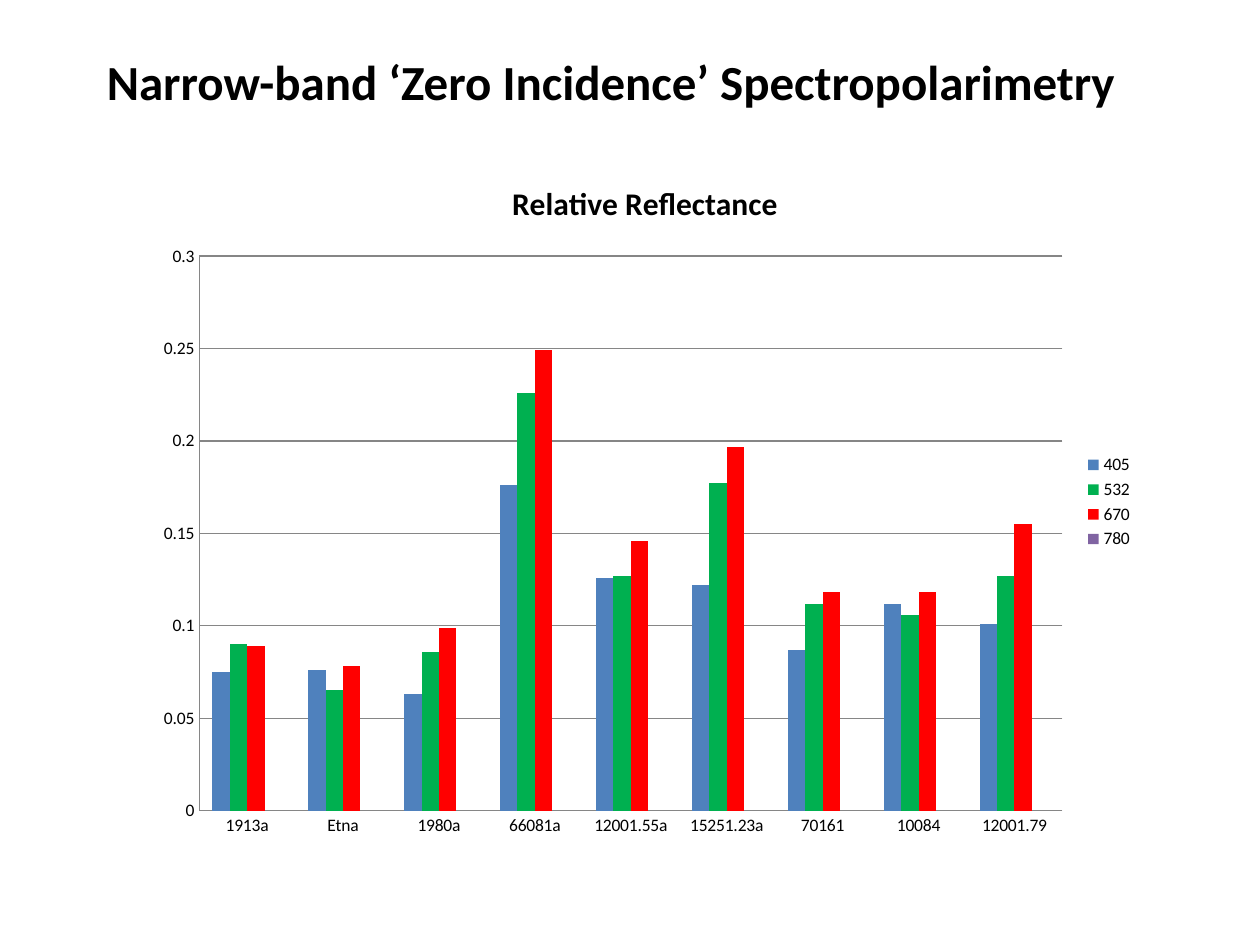
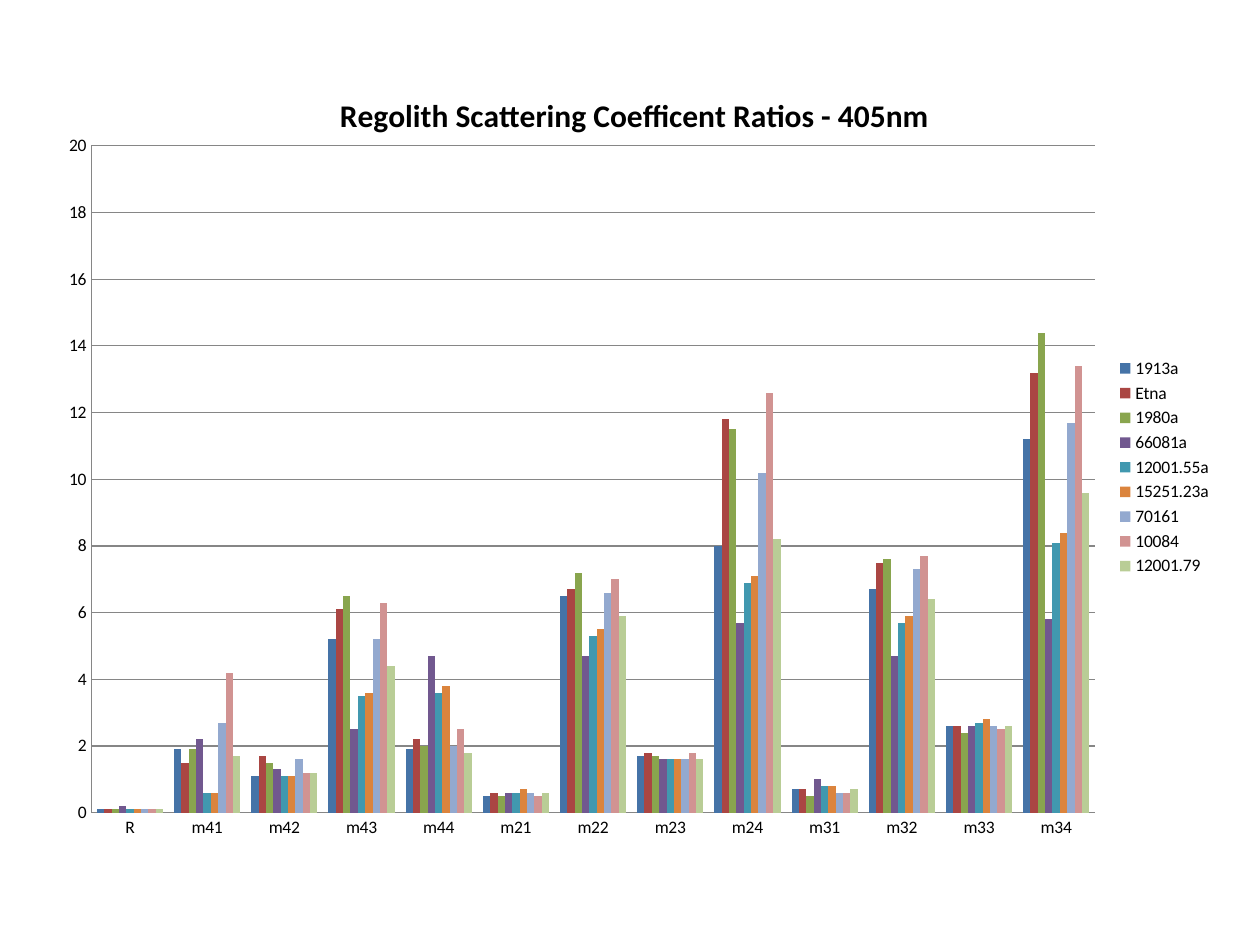
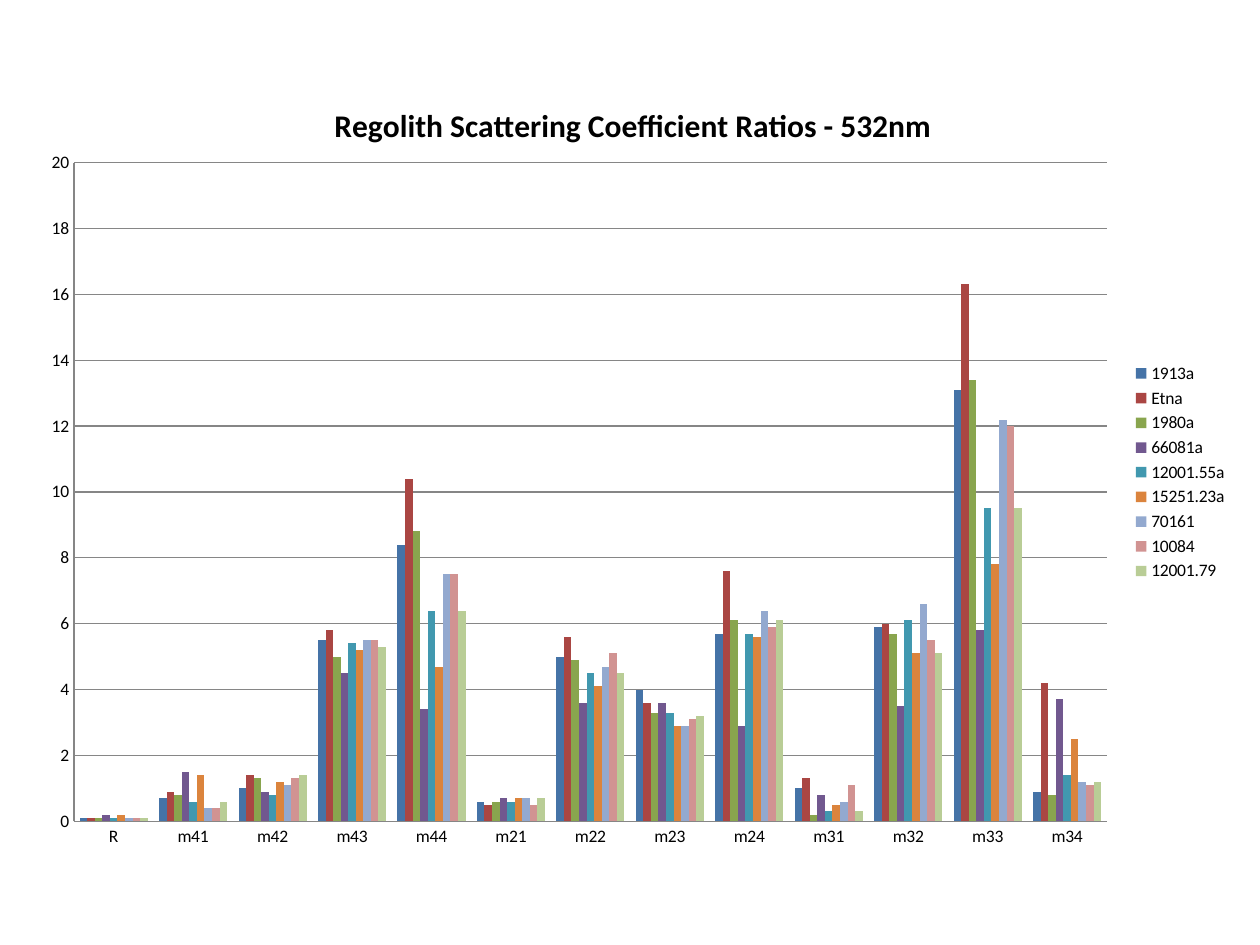
from lxml import etree
from pptx import Presentation
from pptx.chart.data import CategoryChartData
from pptx.dml.color import RGBColor
from pptx.enum.chart import XL_CHART_TYPE, XL_LEGEND_POSITION, XL_TICK_MARK
from pptx.enum.text import MSO_ANCHOR, MSO_AUTO_SIZE, PP_ALIGN
from pptx.oxml.ns import qn
from pptx.util import Cm, Pt

CLUSTERED = XL_CHART_TYPE.COLUMN_CLUSTERED
LEGEND_RIGHT = XL_LEGEND_POSITION.RIGHT
NO_TICKS = XL_TICK_MARK.NONE
LEFT, TOP, FIT_SHAPE = PP_ALIGN.LEFT, MSO_ANCHOR.TOP, MSO_AUTO_SIZE.SHAPE_TO_FIT_TEXT
TITLE_ONLY, BLANK = 5, 6

COLORS = {
    "text": "000000", "grid": "868686", "background": "FFFFFF",
    "405": "4F81BD", "532": "00B050", "670": "FF0000", "780": "8064A2",
    "1913a": "4573A7", "Etna": "AA4643", "1980a": "89A54E",
    "66081a": "71588F", "12001.55a": "4198AF", "15251.23a": "DB843D",
    "70161": "93A9CF", "10084": "D19392", "12001.79": "B9CD96",
}
SAMPLES = ["1913a", "Etna", "1980a", "66081a", "12001.55a", "15251.23a",
           "70161", "10084", "12001.79"]
COEFFICIENTS = ["R"] + [f"m{row}{column}" for row in (4, 2, 3) for column in (1, 2, 3, 4)]

# Reflectance by wavelength, one value per sample
REFLECTANCE = {
    "405": [0.075, 0.076, 0.063, 0.176, 0.126, 0.122, 0.087, 0.112, 0.101],
    "532": [0.09, 0.065, 0.086, 0.226, 0.127, 0.177, 0.112, 0.106, 0.127],
    "670": [0.089, 0.078, 0.099, 0.249, 0.146, 0.197, 0.118, 0.118, 0.155],
    "780": [None] * len(SAMPLES),
}
# Scattering ratios, one row per sample and one value per coefficient
RATIOS_405 = [
    [0.1, 1.9, 1.1, 5.2, 1.9, 0.5, 6.5, 1.7, 8, 0.7, 6.7, 2.6, 11.2],
    [0.1, 1.5, 1.7, 6.1, 2.2, 0.6, 6.7, 1.8, 11.8, 0.7, 7.5, 2.6, 13.2],
    [0.1, 1.9, 1.5, 6.5, 2, 0.5, 7.2, 1.7, 11.5, 0.5, 7.6, 2.4, 14.4],
    [0.2, 2.2, 1.3, 2.5, 4.7, 0.6, 4.7, 1.6, 5.7, 1, 4.7, 2.6, 5.8],
    [0.1, 0.6, 1.1, 3.5, 3.6, 0.6, 5.3, 1.6, 6.9, 0.8, 5.7, 2.7, 8.1],
    [0.1, 0.6, 1.1, 3.6, 3.8, 0.7, 5.5, 1.6, 7.1, 0.8, 5.9, 2.8, 8.4],
    [0.1, 2.7, 1.6, 5.2, 2, 0.6, 6.6, 1.6, 10.2, 0.6, 7.3, 2.6, 11.7],
    [0.1, 4.2, 1.2, 6.3, 2.5, 0.5, 7, 1.8, 12.6, 0.6, 7.7, 2.5, 13.4],
    [0.1, 1.7, 1.2, 4.4, 1.8, 0.6, 5.9, 1.6, 8.2, 0.7, 6.4, 2.6, 9.6],
]
RATIOS_532 = [
    [0.1, 0.7, 1, 5.5, 8.4, 0.6, 5, 4, 5.7, 1, 5.9, 13.1, 0.9],
    [0.1, 0.9, 1.4, 5.8, 10.4, 0.5, 5.6, 3.6, 7.6, 1.3, 6, 16.3, 4.2],
    [0.1, 0.8, 1.3, 5, 8.8, 0.6, 4.9, 3.3, 6.1, 0.2, 5.7, 13.4, 0.8],
    [0.2, 1.5, 0.9, 4.5, 3.4, 0.7, 3.6, 3.6, 2.9, 0.8, 3.5, 5.8, 3.7],
    [0.1, 0.6, 0.8, 5.4, 6.4, 0.6, 4.5, 3.3, 5.7, 0.3, 6.1, 9.5, 1.4],
    [0.2, 1.4, 1.2, 5.2, 4.7, 0.7, 4.1, 2.9, 5.6, 0.5, 5.1, 7.8, 2.5],
    [0.1, 0.4, 1.1, 5.5, 7.5, 0.7, 4.7, 2.9, 6.4, 0.6, 6.6, 12.2, 1.2],
    [0.1, 0.4, 1.3, 5.5, 7.5, 0.5, 5.1, 3.1, 5.9, 1.1, 5.5, 12, 1.1],
    [0.1, 0.6, 1.4, 5.3, 6.4, 0.7, 4.5, 3.2, 6.1, 0.3, 5.1, 9.5, 1.2],
]


def color(name):
    return RGBColor.from_string(COLORS[name])


class DeckBuilder:
    """Holds the deck, its style and the current page."""

    def __init__(self):
        self.deck = Presentation()
        self.deck.slide_width, self.deck.slide_height = Cm(25.4), Cm(19.05)
        self.page = None

    def add_page(self, layout):
        self.page = self.deck.slides.add_slide(self.deck.slide_layouts[layout])
        fill = self.page.background.fill
        fill.solid()
        fill.fore_color.rgb = color("background")

    def set_font(self, font, size, bold=False):
        font.name, font.size, font.bold = "Calibri", Pt(size), bold
        font.color.rgb = color("text")

    def add_title(self, text, left, top, width, height):
        box = self.page.shapes.title
        box.left, box.top, box.width, box.height = map(Cm, (left, top, width, height))
        frame = box.text_frame
        frame.text = text
        frame.word_wrap, frame.auto_size = False, FIT_SHAPE
        frame.vertical_anchor = TOP
        paragraph = frame.paragraphs[0]
        paragraph.alignment = LEFT
        self.set_font(paragraph.font, 28, bold=True)

    def add_column_chart(self, title, categories, series, area, top_value, step, plot_area=None):
        data = CategoryChartData()
        data.categories = categories
        for name, values in series.items():
            data.add_series(name, values)
        chart = self.page.shapes.add_chart(CLUSTERED, *map(Cm, area), data).chart
        self.set_font(chart.font, 10)

        # Title and legend
        chart.has_title = True
        chart.chart_title.text_frame.text = title
        self.set_font(chart.chart_title.text_frame.paragraphs[0].font, 18, bold=True)
        chart.has_legend = True
        chart.legend.position = LEGEND_RIGHT
        chart.legend.include_in_layout = False

        # Columns
        plot = chart.plots[0]
        plot.gap_width, plot.vary_by_categories = 150, False
        for column in plot.series:
            column.format.fill.solid()
            column.format.fill.fore_color.rgb = color(column.name)

        # Axes
        values = chart.value_axis
        values.minimum_scale, values.maximum_scale, values.major_unit = 0, top_value, step
        values.has_major_gridlines = True
        for axis in (chart.category_axis, values):
            axis.major_tick_mark = axis.minor_tick_mark = NO_TICKS
        for line in (chart.category_axis.format.line, values.format.line,
                     values.major_gridlines.format.line):
            line.color.rgb, line.width = color("grid"), Pt(0.75)
        if plot_area:
            self.place_plot(chart, plot_area)

    def place_plot(self, chart, plot_area):
        """Fix the inner plot area as fractions of the chart."""
        parent = chart.element.find(".//" + qn("c:plotArea"))
        for old in parent.findall(qn("c:layout")):
            parent.remove(old)
        layout = etree.Element(qn("c:layout"))
        manual = etree.SubElement(layout, qn("c:manualLayout"))
        settings = [("layoutTarget", "inner"), ("xMode", "edge"), ("yMode", "edge")]
        for tag, value in settings + list(zip("xywh", plot_area)):
            etree.SubElement(manual, qn("c:" + tag)).set("val", str(value))
        parent.insert(0, layout)


def main():
    builder = DeckBuilder()

    # Relative reflectance of the samples
    builder.add_page(TITLE_ONLY)
    builder.add_title("Narrow-band ‘Zero Incidence’ Spectropolarimetry", 1.9, 0.92, 21.1, 1.45)
    builder.add_column_chart("Relative Reflectance", SAMPLES, REFLECTANCE,
                             (2.9, 3.12, 20.2, 14), 0.3, 0.05)

    # Scattering ratios, one page per wavelength
    ratio_pages = [
        ("Regolith Scattering Coefficent Ratios - 405nm", RATIOS_405,
         (0.89, 1.32, 23.8, 16.2), (0.04, 0.1, 0.85, 0.83)),
        ("Regolith Scattering Coefficient Ratios - 532nm", RATIOS_532,
         (0.51, 1.52, 24.5, 16), (0.04, 0.11, 0.85, 0.83)),
    ]
    for title, ratios, area, plot_area in ratio_pages:
        builder.add_page(BLANK)
        builder.add_column_chart(title, COEFFICIENTS, dict(zip(SAMPLES, ratios)),
                                 area, 20, 2, plot_area)

    builder.deck.save("out.pptx")


if __name__ == "__main__":
    main()
